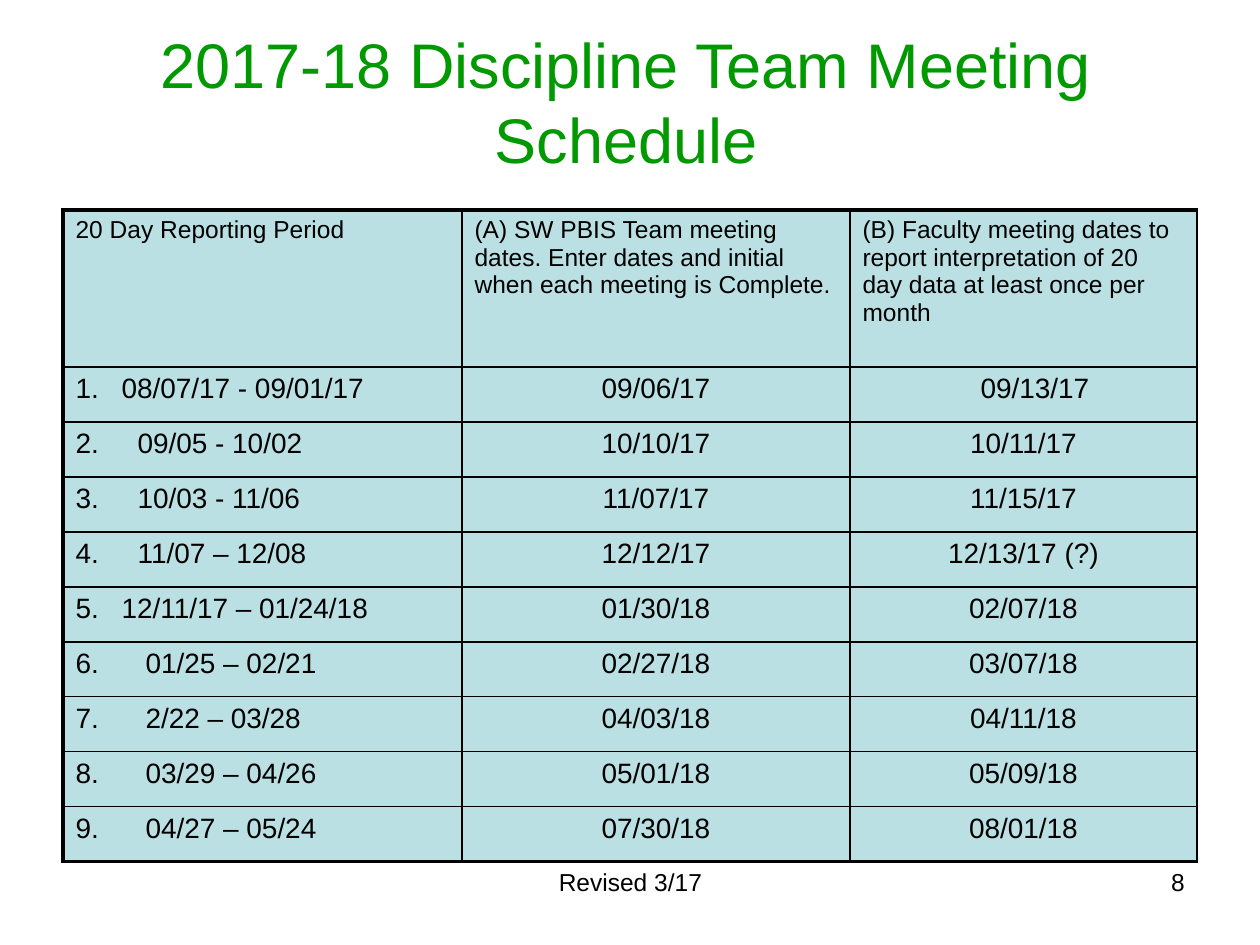
from lxml.etree import SubElement
from pptx import Presentation
from pptx.dml.color import RGBColor
from pptx.enum.text import MSO_ANCHOR as Anchor, PP_ALIGN as Align
from pptx.oxml.ns import qn
from pptx.util import Emu, Pt

PX = 914400 // 126
GREEN, BLACK, PALE_BLUE = "009900", "000000", "BBE0E3"
THIN, THICK = 1, 2.25

HEADINGS = (
    "20 Day Reporting Period",
    "(A) SW PBIS Team meeting dates. Enter dates and initial when each meeting is Complete.",
    "(B) Faculty meeting dates to report interpretation of 20 day data at least once per month",
)
# Reporting period, its tab stop in px, team meeting, faculty meeting
MEETINGS = (
    ("08/07/17 - 09/01/17", 46, "09/06/17", "09/13/17"),
    ("09/05 - 10/02", 62, "10/10/17", "10/11/17"),
    ("10/03 - 11/06", 62, "11/07/17", "11/15/17"),
    ("11/07 – 12/08", 62, "12/12/17", "12/13/17 (?)"),
    ("12/11/17 – 01/24/18", 46, "01/30/18", "02/07/18"),
    ("01/25 – 02/21", 70, "02/27/18", "03/07/18"),
    ("2/22 – 03/28", 70, "04/03/18", "04/11/18"),
    ("03/29 – 04/26", 70, "05/01/18", "05/09/18"),
    ("04/27 – 05/24", 70, "07/30/18", "08/01/18"),
)


def px(n):
    return Emu(n * PX)


def rgb(color):
    return RGBColor.from_string(color)


class SlideBuilder:
    def __init__(self, slide, font="Arial"):
        self.slide = slide
        self.font = font

    def set_text(self, tf, text, size, color=BLACK, align=Align.LEFT):
        tf.word_wrap = True
        p = tf.paragraphs[0]
        p.text = text
        p.alignment = align
        p.font.name = self.font
        p.font.size = Pt(size)
        p.font.color.rgb = rgb(color)
        return p

    def title(self, text, x, y, w, h, raise_by):
        """Centre the title; the bottom inset lifts it clear of the table."""
        sp = self.slide.shapes.title
        sp.left, sp.top, sp.width, sp.height = map(px, (x, y, w, h))
        tf = sp.text_frame
        tf.vertical_anchor = Anchor.MIDDLE
        tf.margin_bottom = px(raise_by)
        self.set_text(tf, text, 36, GREEN, Align.CENTER)

    def text(self, text, x, y, w, h, align):
        sp = self.slide.shapes.add_textbox(*map(px, (x, y, w, h)))
        self.set_text(sp.text_frame, text, 14, align=align)

    def table(self, x, y, widths, heights):
        table = self.slide.shapes.add_table(
            len(heights), len(widths), px(x), px(y),
            px(sum(widths)), px(sum(heights))).table
        for col, w in zip(table.columns, widths):
            col.width = px(w)
        for row, h in zip(table.rows, heights):
            row.height = px(h)
        last = len(heights) - 1
        for r in range(len(heights)):
            for c in range(len(widths)):
                cell = table.cell(r, c)
                self.borders(cell, L=THIN if c else THICK, R=THIN,
                             T=THIN if r else THICK,
                             B=THICK if r == last else THIN)
                cell.fill.solid()
                cell.fill.fore_color.rgb = rgb(PALE_BLUE)
        return table

    def borders(self, cell, **widths):
        tc_pr = cell._tc.get_or_add_tcPr()
        for side, width in widths.items():
            ln = SubElement(tc_pr, qn(f"a:ln{side}"), w=str(Pt(width)))
            fill = SubElement(ln, qn("a:solidFill"))
            SubElement(fill, qn("a:srgbClr"), val=BLACK)

    def cell(self, cell, text, size=16, align=Align.CENTER, tab=0, indent=0):
        p = self.set_text(cell.text_frame, text, size, align=align)
        p_pr = p._p.get_or_add_pPr()
        if indent:
            p_pr.set("marL", str(px(indent)))
        if tab:
            tabs = p_pr.makeelement(qn("a:tabLst"))
            SubElement(tabs, qn("a:tab"), pos=str(px(tab)), algn="l")
            p_pr.insert(0, tabs)


def main():
    prs = Presentation()
    prs.slide_width, prs.slide_height = px(1260), px(945)
    s = SlideBuilder(prs.slides.add_slide(prs.slide_layouts[5]))

    s.text("Revised 3/17", 431, 861, 399, 65, Align.CENTER)
    s.text("8", 903, 861, 294, 65, Align.RIGHT)
    s.title("2017-18 Discipline Team Meeting Schedule", 59, 63, 1134, 147, raise_by=78)

    table = s.table(63, 210, (399, 388, 347), [157] + [55] * len(MEETINGS))
    for c, heading in enumerate(HEADINGS):
        s.cell(table.cell(0, c), heading, size=14, align=Align.LEFT)
    for r, (period, tab, team, faculty) in enumerate(MEETINGS, 1):
        s.cell(table.cell(r, 0), f"{r}.\t{period}", align=Align.LEFT, tab=tab)
        s.cell(table.cell(r, 1), team)
        s.cell(table.cell(r, 2), faculty, indent=23 if r == 1 else 0)

    prs.save("out.pptx")


if __name__ == "__main__":
    main()
